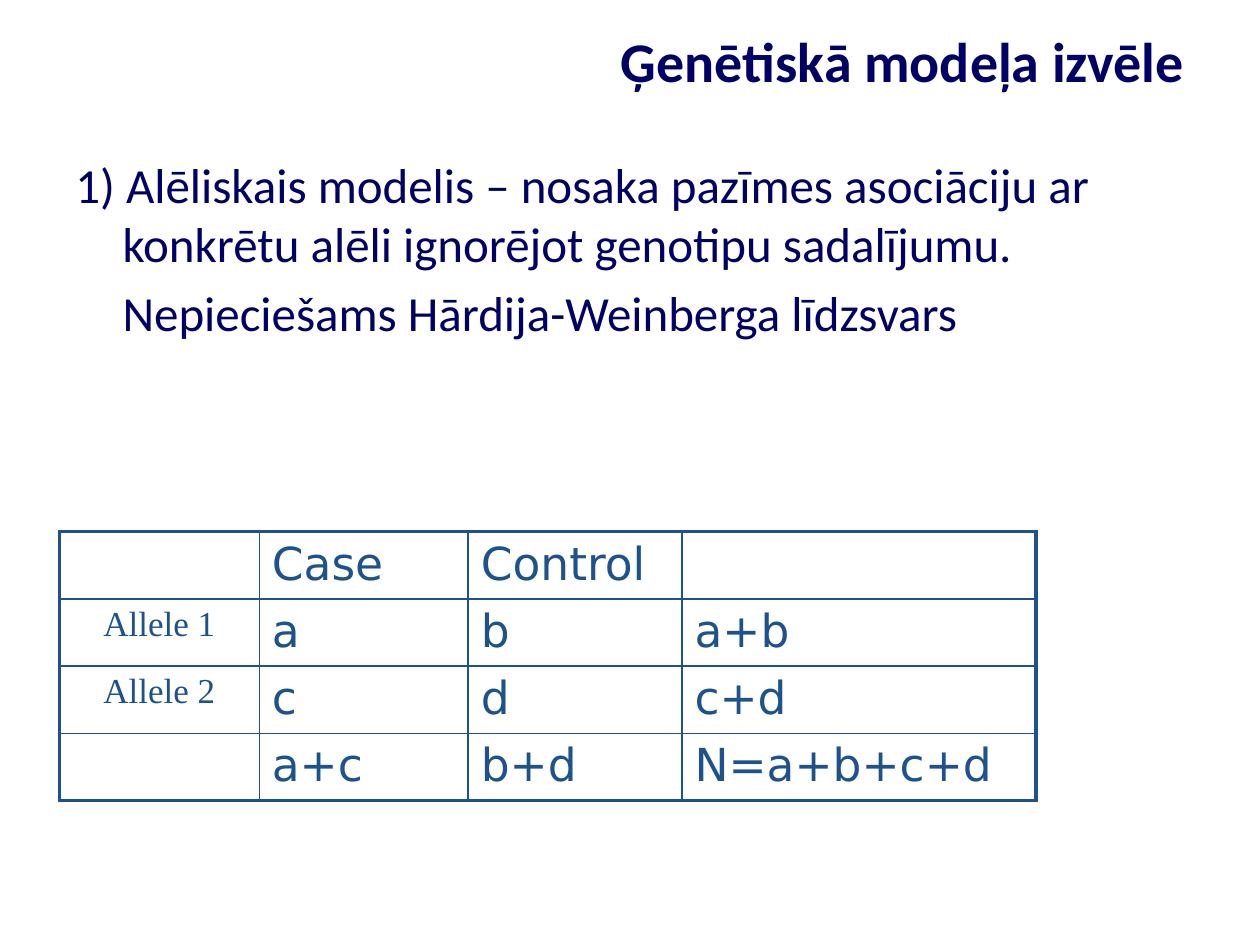
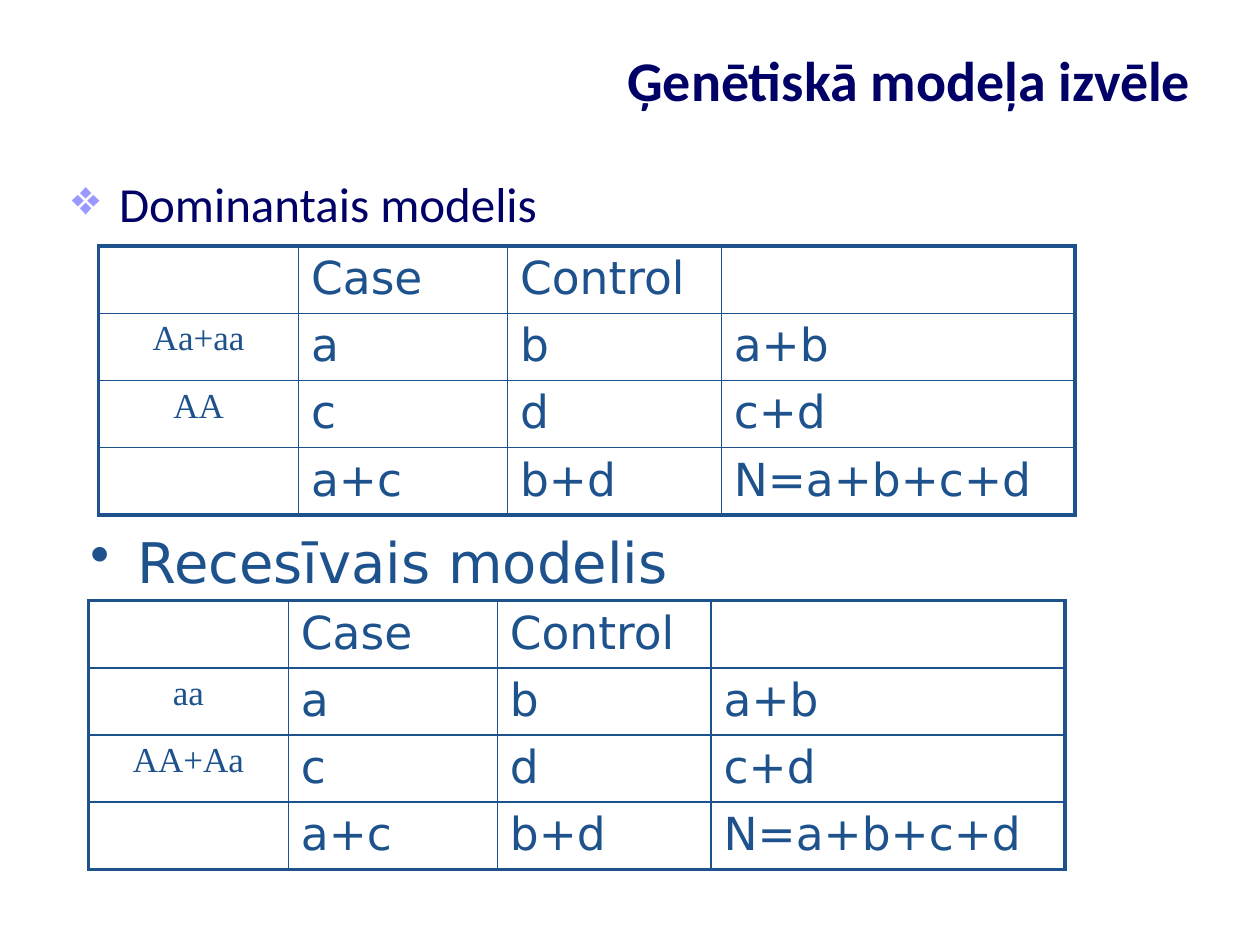
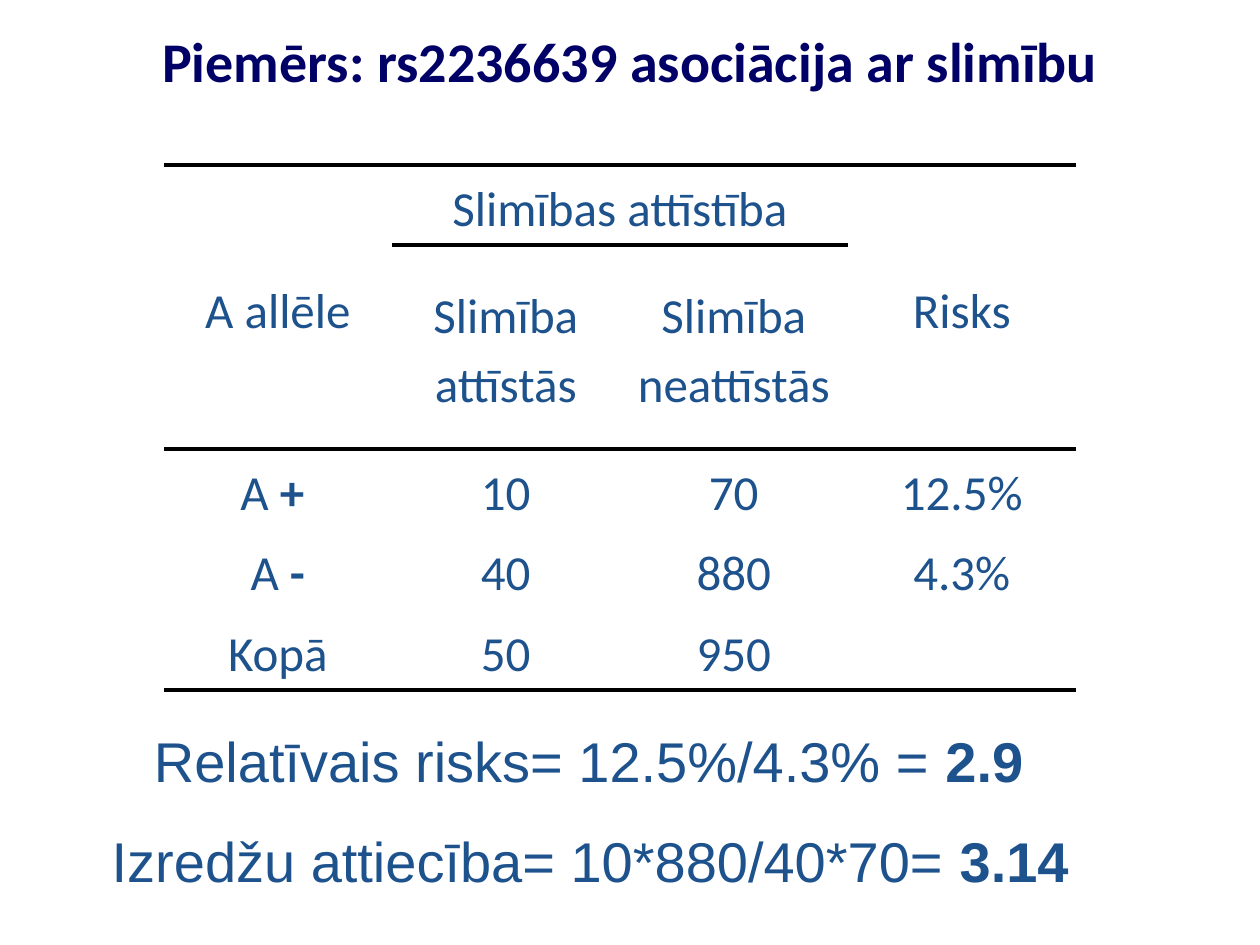
from collections import namedtuple

from lxml import etree
from pptx import Presentation
from pptx.dml.color import RGBColor
from pptx.enum.text import MSO_ANCHOR, MSO_AUTO_SIZE, PP_ALIGN
from pptx.oxml.ns import qn
from pptx.util import Pt

LEFT, CENTER, RIGHT = PP_ALIGN.LEFT, PP_ALIGN.CENTER, PP_ALIGN.RIGHT
TOP, MIDDLE = MSO_ANCHOR.TOP, MSO_ANCHOR.MIDDLE
FIT_SHAPE = MSO_AUTO_SIZE.SHAPE_TO_FIT_TEXT

NAVY, BLUE, LILAC, BLACK = "000066", "1D528D", "9999FF", "000000"
THICK, THIN = 2.25, 1
HANG = 27

# Text styles
Style = namedtuple("Style", "font size color align bold spacing",
                   defaults=(LEFT, False, None))
TITLE = Style("Calibri", 32, NAVY, RIGHT, True)
BODY = Style("Calibri", 28, NAVY)
SUBHEAD = Style("DejaVu Sans", 32, BLUE)
COUNT = Style("DejaVu Sans", 26, BLUE)
GENOTYPE = Style("Times New Roman", 20, BLUE, CENTER)
RISK = Style("Calibri", 28, BLUE, CENTER, False, 1.15)
RESULT = Style("Arial", 32, BLUE, RIGHT)


def rgb(color):
    return RGBColor.from_string(color)


class Deck:
    def __init__(self):
        self.prs = Presentation()
        self.prs.slide_width, self.prs.slide_height = Pt(720), Pt(540)
        self.slide = None

    def new_slide(self, title, left=36, top=12.2, height=44.6, align=RIGHT):
        self.slide = self.prs.slides.add_slide(self.prs.slide_layouts[6])
        frame = self.box(left, top, 648, height)
        frame.vertical_anchor = MIDDLE
        self.set_text(frame.paragraphs[0], title, TITLE._replace(align=align))

    def box(self, left, top, width, height):
        shape = self.slide.shapes.add_textbox(Pt(left), Pt(top), Pt(width), Pt(height))
        shape.text_frame.word_wrap = True
        return shape.text_frame

    def set_text(self, paragraph, text, style):
        """Set one string, or a plain part followed by a bold part."""
        parts = (text,) if isinstance(text, str) else text
        for part in parts:
            paragraph.add_run().text = part
        paragraph.alignment = style.align
        if style.spacing:
            paragraph.line_spacing = style.spacing
        font = paragraph.font
        font.name, font.size, font.bold = style.font, Pt(style.size), style.bold
        font.color.rgb = rgb(style.color)
        if len(parts) > 1:
            paragraph.runs[-1].font.bold = True

    def indent(self, paragraph, first=-HANG, bullet=None, bullet_color=None):
        props = paragraph._p.get_or_add_pPr()
        props.set("marL", str(Pt(HANG)))
        props.set("indent", str(Pt(first)))
        if bullet_color:
            fill = etree.SubElement(props, qn("a:buClr"))
            etree.SubElement(fill, qn("a:srgbClr"), val=bullet_color)
        if bullet:
            etree.SubElement(props, qn("a:buChar"), char=bullet)

    def bullet(self, text, left, top, style, mark, mark_color=None):
        paragraph = self.box(left, top, 648, 82).paragraphs[0]
        self.indent(paragraph, bullet=mark, bullet_color=mark_color)
        self.set_text(paragraph, text, style)

    def result(self, text, left, top, width):
        frame = self.box(left, top, width, 46)
        frame.word_wrap = False
        frame.auto_size = FIT_SHAPE
        self.set_text(frame.paragraphs[0], text, RESULT)

    def border(self, cell, side, width, color):
        line = etree.SubElement(cell._tc.get_or_add_tcPr(), qn("a:ln" + side))
        line.set("w", str(Pt(width)))
        if width:
            fill = etree.SubElement(line, qn("a:solidFill"))
            etree.SubElement(fill, qn("a:srgbClr"), val=color)
        else:
            etree.SubElement(line, qn("a:noFill"))

    def table(self, left, top, widths, heights, rows, styles, line_color,
              across, down, merges=(), anchor=TOP, margins=(7.2, 3.6)):
        """across(line, column) and down(line, row) give the rule widths."""
        grid = self.slide.shapes.add_table(
            len(heights), len(widths), Pt(left), Pt(top),
            Pt(sum(widths)), Pt(sum(heights))).table
        grid.first_row = grid.horz_banding = False
        for column, width in zip(grid.columns, widths):
            column.width = Pt(width)
        for row, height in zip(grid.rows, heights):
            row.height = Pt(height)
        for start, end in merges:
            grid.cell(*start).merge(grid.cell(*end))

        for r, texts in enumerate(rows):
            for c, text in enumerate(texts):
                cell = grid.cell(r, c)
                below = r + (cell.span_height if cell.is_merge_origin else 1)
                beside = c + (cell.span_width if cell.is_merge_origin else 1)
                self.border(cell, "L", down(c, r), line_color)
                self.border(cell, "R", down(beside, r), line_color)
                self.border(cell, "T", across(r, c), line_color)
                self.border(cell, "B", across(below, c), line_color)
                cell.fill.background()
                cell.vertical_anchor = anchor
                cell.margin_left = cell.margin_right = Pt(margins[0])
                cell.margin_top = cell.margin_bottom = Pt(margins[1])
                if text:
                    self.set_text(cell.text_frame.paragraphs[0], text, styles[c])

    def model_table(self, left, top, first, second, head_height=38.2):
        """Case-control counts for two groups, with totals."""
        def edge(line, _):
            return THICK if line in (0, 4) else THIN

        rows = [("", "Case", "Control", ""),
                (first, "a", "b", "a+b"),
                (second, "c", "d", "c+d"),
                ("", "a+c", "b+d", "N=a+b+c+d")]
        self.table(left, top, (114.2, 119.4, 122.2, 202.2),
                   (head_height,) + (37.5,) * 3, rows,
                   (GENOTYPE, COUNT, COUNT, COUNT), BLUE, edge, edge)


def allelic_model(deck):
    deck.new_slide("Ģenētiskā modeļa izvēle")
    frame = deck.box(36, 85, 648, 413)
    definition, condition = frame.paragraphs[0], frame.add_paragraph()
    deck.indent(definition)
    deck.set_text(definition, "1) Alēliskais modelis – nosaka pazīmes asociāciju ar "
                  "konkrētu alēli ignorējot genotipu sadalījumu.", BODY)
    deck.indent(condition, first=0)
    condition.space_before = Pt(5.6)
    deck.set_text(condition, "Nepieciešams Hārdija-Weinberga līdzsvars", BODY)
    deck.model_table(34, 303.8, "Allele 1", "Allele 2", head_height=37.5)


def dominant_and_recessive_models(deck):
    deck.new_slide("Ģenētiskā modeļa izvēle", left=39.6, top=0, height=90)
    deck.bullet("Dominantais modelis", 34, 95.8, BODY, "❖", LILAC)
    deck.model_table(56.4, 140.6, "Aa+aa", "AA")
    deck.bullet("Recesīvais modelis", 44.6, 298, SUBHEAD, "•")
    deck.model_table(50.6, 343.2, "aa", "AA+Aa")


def risk_example(deck):
    deck.new_slide("Piemērs: rs2236639 asociācija ar slimību", align=CENTER)

    def across(line, column):
        under_group = line == 1 and column in (1, 2)
        return THICK if line in (0, 2, 5) or under_group else 0

    rows = [("A allēle", "Slimības attīstība", "", "Risks"),
            ("", "Slimība attīstās", "Slimība neattīstās", ""),
            (("A ", "+ "), "10", "70", "12.5%"),
            (("A ", "-"), "40", "880", "4.3%"),
            ("Kopā", "50", "950", "")]
    merges = [((0, 0), (1, 0)), ((0, 1), (0, 2)), ((0, 3), (1, 3))]
    deck.table(93.6, 94.3, (130.3,) * 4, (45.8, 116.6) + (45.9,) * 3, rows,
               (RISK,) * 4, BLACK, across, lambda line, row: 0,
               merges, MIDDLE, (5, 0))

    # Risk ratio and odds ratio
    deck.result(("Relatīvais risks= 12.5%/4.3% = ", "2.9"), 76.4, 411.8, 515.5)
    deck.result(("Izredžu attiecība= 10*880/40*70= ", "3.14"), 52.6, 468.7, 565.2)


def main():
    deck = Deck()
    allelic_model(deck)
    dominant_and_recessive_models(deck)
    risk_example(deck)
    deck.prs.save("out.pptx")


if __name__ == "__main__":
    main()
